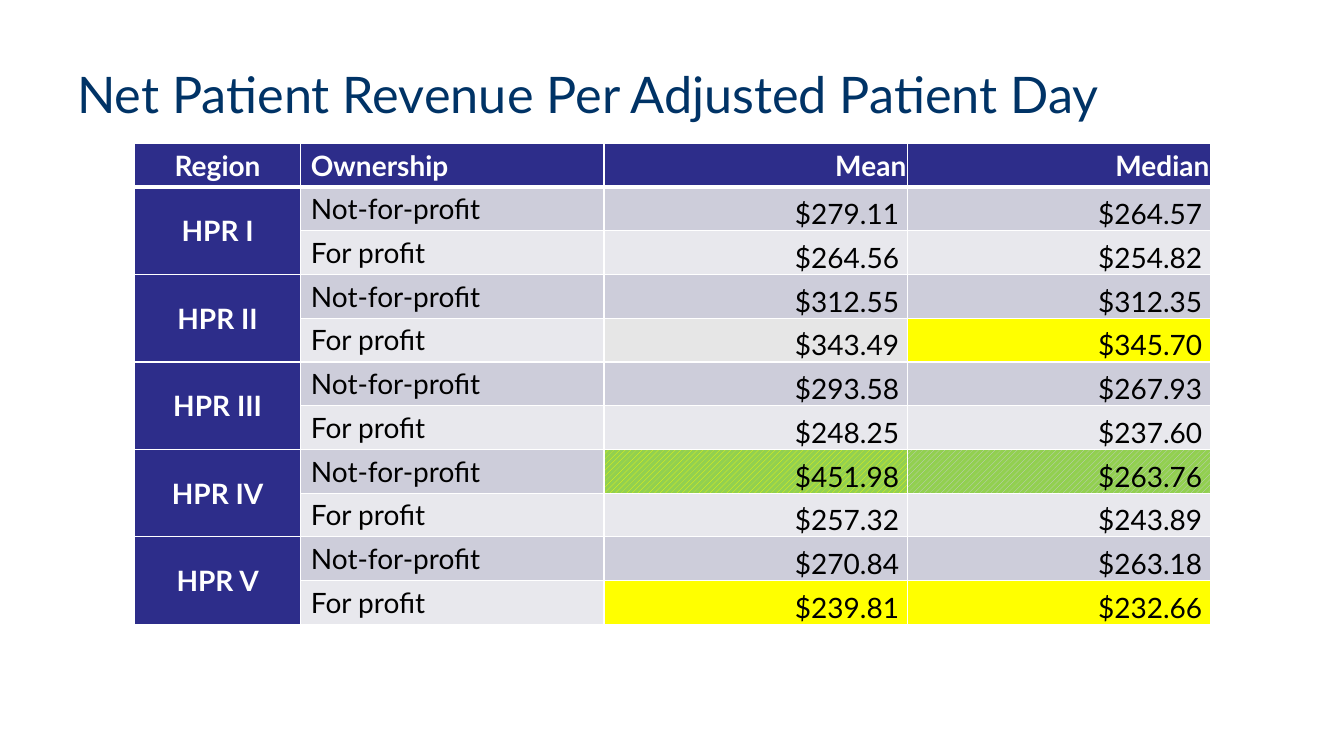
from lxml.etree import SubElement
from pptx import Presentation
from pptx.dml.color import RGBColor
from pptx.enum.dml import MSO_PATTERN as Pattern
from pptx.enum.text import MSO_ANCHOR as Anchor, PP_ALIGN as Align
from pptx.oxml.ns import qn
from pptx.util import Cm, Pt

FONT = "Lato"
NAVY, WHITE, BLACK, YELLOW, GREEN = "2D2D8A", "FFFFFF", "000000", "FFFF00", "92D050"
BANDS = ("CDCDDA", "E8E8ED")
HEADINGS = ("Region", "Ownership", "Mean", "Median")
OWNERSHIPS = ("Not-for-profit", "For profit")
COLUMN_WIDTHS = (4.19, 7.64, 7.64, 7.64)
ROW_HEIGHT = 1.1
REVENUES = {
    "HPR I": (("$279.11", "$264.57"), ("$264.56", "$254.82")),
    "HPR II": (("$312.55", "$312.35"), ("$343.49", "$345.70")),
    "HPR III": (("$293.58", "$267.93"), ("$248.25", "$237.60")),
    "HPR IV": (("$451.98", "$263.76"), ("$257.32", "$243.89")),
    "HPR V": (("$270.84", "$263.18"), ("$239.81", "$232.66")),
}
HIGHLIGHTS = {
    "$343.49": ("E6E6E6",),
    "$345.70": (YELLOW,),
    "$451.98": (GREEN, YELLOW),
    "$263.76": (GREEN, BANDS[0]),
    "$239.81": (YELLOW,),
    "$232.66": (YELLOW,),
}


def color(value):
    """Turn a hex string into a colour."""
    return RGBColor.from_string(value)


def write(paragraph, text, size, font_color, bold=False, align=Align.LEFT):
    """Put styled text in a paragraph."""
    paragraph.text = text
    paragraph.alignment = align
    font = paragraph.font
    font.name, font.size, font.bold = FONT, Pt(size), bold
    font.color.rgb = color(font_color)


def paint(cell, background, stripes=None):
    """Fill a cell plainly, or with diagonal stripes."""
    if stripes is None:
        cell.fill.solid()
        cell.fill.fore_color.rgb = color(background)
    else:
        cell.fill.patterned()
        cell.fill.pattern = Pattern.WIDE_UPWARD_DIAGONAL
        cell.fill.fore_color.rgb = color(stripes)
        cell.fill.back_color.rgb = color(background)


def add_borders(cell, row):
    """Draw white borders, with a thick rule under the header row."""
    properties = cell._tc.get_or_add_tcPr()
    thick_side = {0: "lnB", 1: "lnT"}.get(row)
    for side in ("lnL", "lnR", "lnT", "lnB"):
        width = Pt(3 if side == thick_side else 1)
        line = SubElement(properties, qn(f"a:{side}"), w=str(width))
        fill = SubElement(line, qn("a:solidFill"))
        SubElement(fill, qn("a:srgbClr"), val=WHITE)


def fill_label(cell, text, fill, font_color, bold, align, anchor):
    """Fill a header, region or ownership cell."""
    paint(cell, fill)
    cell.vertical_anchor = anchor
    write(cell.text_frame.paragraphs[0], text, 20, font_color, bold, align)


def fill_figure(cell, text, band):
    """Fill a revenue cell, highlighted where called for."""
    paint(cell, *HIGHLIGHTS.get(text, (band,)))
    cell.vertical_anchor = Anchor.BOTTOM
    cell.margin_left = cell.margin_top = Cm(0.02)
    cell.margin_right, cell.margin_bottom = Cm(0.2), 0
    write(cell.text_frame.paragraphs[0], text, 20, BLACK, align=Align.RIGHT)


def add_header(table):
    """Fill the header row."""
    aligns = (Align.CENTER, Align.LEFT, Align.RIGHT, Align.RIGHT)
    anchors = (Anchor.MIDDLE, Anchor.TOP, Anchor.MIDDLE, Anchor.MIDDLE)
    for column, (text, align, anchor) in enumerate(zip(HEADINGS, aligns, anchors)):
        cell = table.cell(0, column)
        fill_label(cell, text, NAVY, WHITE, True, align, anchor)
        if align == Align.RIGHT:
            cell.margin_left = cell.margin_top = cell.margin_right = Cm(0.02)
            cell.margin_bottom = 0


def add_region(table, first_row, region, revenues):
    """Fill the two rows of a region."""
    region_cell = table.cell(first_row, 0)
    region_cell.merge(table.cell(first_row + 1, 0))
    fill_label(region_cell, region, NAVY, WHITE, True, Align.CENTER, Anchor.MIDDLE)
    for offset, (ownership, figures, band) in enumerate(zip(OWNERSHIPS, revenues, BANDS)):
        row = first_row + offset
        fill_label(table.cell(row, 1), ownership, band, BLACK, False, Align.LEFT, Anchor.TOP)
        for column, figure in enumerate(figures, 2):
            fill_figure(table.cell(row, column), figure, band)


def add_revenue_table(slide, left, top):
    """Build the revenue table from its top left corner."""
    row_count = 1 + len(OWNERSHIPS) * len(REVENUES)
    table = slide.shapes.add_table(
        row_count, len(HEADINGS), Cm(left), Cm(top),
        Cm(sum(COLUMN_WIDTHS)), Cm(ROW_HEIGHT * row_count)).table
    table.horz_banding = False
    for column, width in zip(table.columns, COLUMN_WIDTHS):
        column.width = Cm(width)
    for index, row in enumerate(table.rows):
        row.height = Cm(ROW_HEIGHT)
        for cell in row.cells:
            add_borders(cell, index)
    add_header(table)
    for index, (region, revenues) in enumerate(REVENUES.items()):
        add_region(table, 1 + index * len(OWNERSHIPS), region, revenues)


def add_title(slide, left, top, width, height):
    """Place the slide title in its box."""
    frame = slide.shapes.add_textbox(Cm(left), Cm(top), Cm(width), Cm(height)).text_frame
    frame.word_wrap = True
    frame.vertical_anchor = Anchor.MIDDLE
    write(frame.paragraphs[0], "Net Patient Revenue Per Adjusted Patient Day", 36, "003366")


def main():
    """Build and save the slide."""
    presentation = Presentation()
    presentation.slide_width, presentation.slide_height = Cm(33.87), Cm(19.05)
    slide = presentation.slides.add_slide(presentation.slide_layouts[6])
    add_title(slide, 1.7, 0.76, 30.48, 3.18)
    add_revenue_table(slide, 3.39, 3.61)
    presentation.save("out.pptx")


if __name__ == "__main__":
    main()
